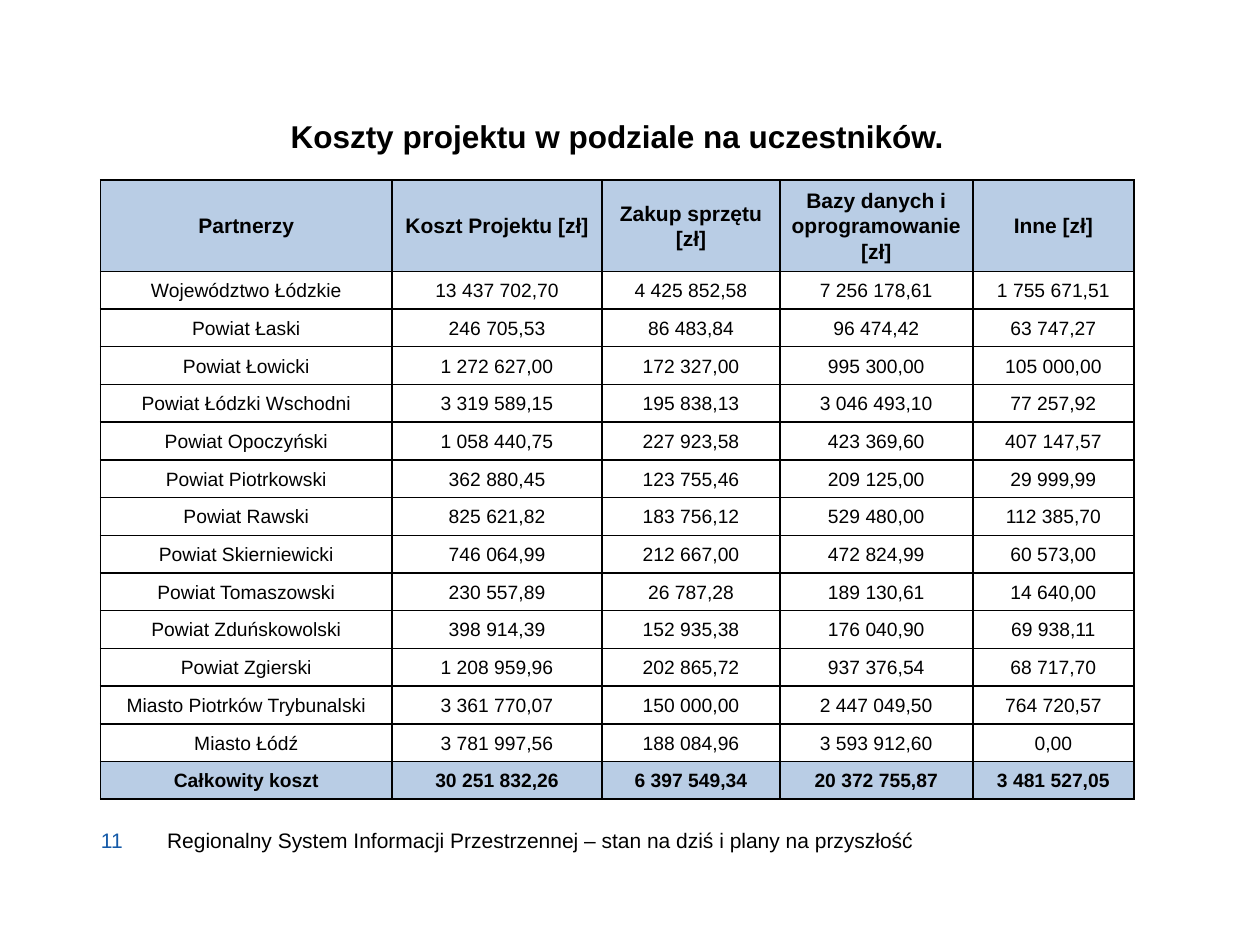
import lxml.etree
import pptx
import pptx.dml.color
import pptx.enum.text
import pptx.oxml.ns
import pptx.util

Cm = pptx.util.Cm
Pt = pptx.util.Pt
ALIGN = pptx.enum.text.PP_ALIGN
ANCHOR = pptx.enum.text.MSO_ANCHOR


def color(hex_string):
    return pptx.dml.color.RGBColor.from_string(hex_string)


def write(paragraph, text, size, bold=False, fill="000000", align=ALIGN.CENTER):
    paragraph.text = text
    paragraph.alignment = align
    font_format = {"name": "Arial", "size": Pt(size), "bold": bold}
    for name, value in font_format.items():
        setattr(paragraph.font, name, value)
    paragraph.font.color.rgb = color(fill)


presentation = pptx.Presentation()
presentation.slide_width = Cm(25.4)
presentation.slide_height = Cm(19.05)
slide = presentation.slides.add_slide(presentation.slide_layouts[5])

# Title
title = slide.shapes.title
title_format = {"left": Cm(2.03), "top": Cm(2.24), "width": Cm(20.83), "height": Cm(1.02)}
for name, value in title_format.items():
    setattr(title, name, value)
title.text_frame.vertical_anchor = ANCHOR.TOP
title.text_frame.auto_size = pptx.enum.text.MSO_AUTO_SIZE.NONE
write(title.text_frame.paragraphs[0], "Koszty projektu w podziale na uczestników.", 18, True)

# Cost table
costs = [
    ("Partnerzy", "Koszt Projektu [zł]", "Zakup sprzętu [zł]",
     "Bazy danych i oprogramowanie [zł]", "Inne [zł]"),
    ("Województwo Łódzkie", "13 437 702,70", "4 425 852,58", "7 256 178,61", "1 755 671,51"),
    ("Powiat Łaski", "246 705,53", "86 483,84", "96 474,42", "63 747,27"),
    ("Powiat Łowicki", "1 272 627,00", "172 327,00", "995 300,00", "105 000,00"),
    ("Powiat Łódzki Wschodni", "3 319 589,15", "195 838,13", "3 046 493,10", "77 257,92"),
    ("Powiat Opoczyński", "1 058 440,75", "227 923,58", "423 369,60", "407 147,57"),
    ("Powiat Piotrkowski", "362 880,45", "123 755,46", "209 125,00", "29 999,99"),
    ("Powiat Rawski", "825 621,82", "183 756,12", "529 480,00", "112 385,70"),
    ("Powiat Skierniewicki", "746 064,99", "212 667,00", "472 824,99", "60 573,00"),
    ("Powiat Tomaszowski", "230 557,89", "26 787,28", "189 130,61", "14 640,00"),
    ("Powiat Zduńskowolski", "398 914,39", "152 935,38", "176 040,90", "69 938,11"),
    ("Powiat Zgierski", "1 208 959,96", "202 865,72", "937 376,54", "68 717,70"),
    ("Miasto Piotrków Trybunalski", "3 361 770,07", "150 000,00", "2 447 049,50", "764 720,57"),
    ("Miasto Łódź", "3 781 997,56", "188 084,96", "3 593 912,60", "0,00"),
    ("Całkowity koszt", "30 251 832,26", "6 397 549,34", "20 372 755,87", "3 481 527,05"),
]
column_widths = [5.87, 4.24, 3.58, 3.89, 3.25]
header_height, row_height = 1.84, 0.76
last_row = len(costs) - 1
table = slide.shapes.add_table(
    len(costs), len(column_widths), Cm(2.03), Cm(3.63),
    Cm(sum(column_widths)), Cm(header_height + last_row * row_height)).table
table.first_row = False
table.horz_banding = False
for column, width in zip(table.columns, column_widths):
    column.width = Cm(width)

cell_format = {
    "margin_left": Cm(0.13), "margin_right": Cm(0.13),
    "margin_top": 0, "margin_bottom": 0, "vertical_anchor": ANCHOR.MIDDLE,
}
for row_index, texts in enumerate(costs):
    table.rows[row_index].height = Cm(row_height if row_index else header_height)
    shaded = row_index in (0, last_row)
    for column_index, text in enumerate(texts):
        cell = table.cell(row_index, column_index)
        for name, value in cell_format.items():
            setattr(cell, name, value)
        paragraph = cell.text_frame.paragraphs[0]
        write(paragraph, text, 11 if row_index else 12, shaded)
        paragraph.line_spacing = 1.07

        # Borders go before the fill in the cell properties
        properties = cell._tc.get_or_add_tcPr()
        for side in ("a:lnL", "a:lnR", "a:lnT", "a:lnB"):
            border = lxml.etree.SubElement(properties, pptx.oxml.ns.qn(side), w=str(Pt(1)))
            solid = lxml.etree.SubElement(border, pptx.oxml.ns.qn("a:solidFill"))
            lxml.etree.SubElement(solid, pptx.oxml.ns.qn("a:srgbClr"), val="000000")
        if shaded:
            cell.fill.solid()
            cell.fill.fore_color.rgb = color("B9CDE5")
        else:
            cell.fill.background()

# Slide number and footer
footers = [
    ("11", 1.57, 1.37, "145AA8", ALIGN.CENTER),
    ("Regionalny System Informacji Przestrzennej – stan na dziś i plany na przyszłość",
     3.12, 20.02, "000000", ALIGN.LEFT),
]
for text, left, width, fill, align in footers:
    text_frame = slide.shapes.add_textbox(Cm(left), Cm(16.43), Cm(width), Cm(1.02)).text_frame
    text_frame.word_wrap = True
    text_frame.vertical_anchor = ANCHOR.MIDDLE
    write(text_frame.paragraphs[0], text, 12, fill=fill, align=align)

presentation.save("out.pptx")
